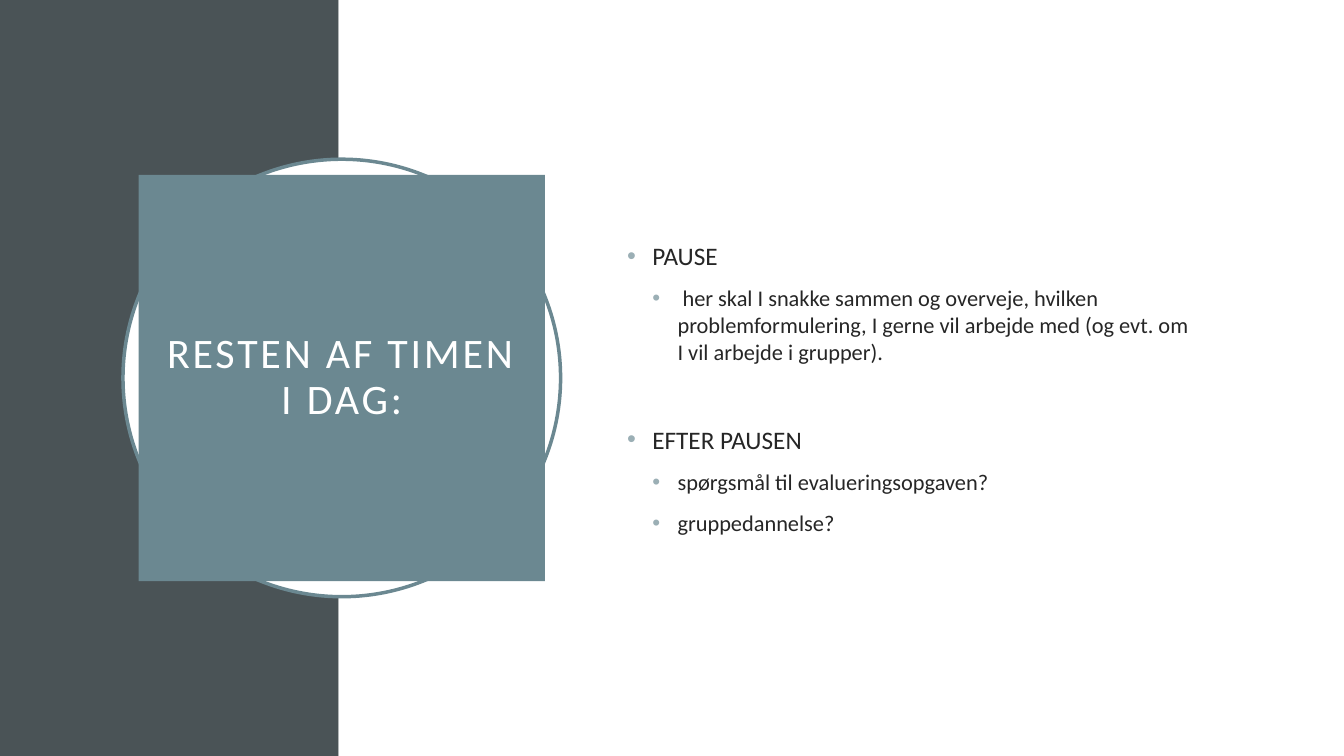
from pptx import Presentation
from pptx.dml.color import RGBColor
from pptx.enum.shapes import MSO_SHAPE as SHAPE
from pptx.enum.text import MSO_ANCHOR as ANCHOR, MSO_AUTO_SIZE as AUTO, PP_ALIGN as ALIGN
from pptx.oxml.ns import qn
from pptx.util import Inches, Pt
from lxml.etree import SubElement

# Content
TITLE = "RESTEN AF TIMEN I DAG:"
ITEMS = [  # level, text, space before in points
    (0, "PAUSE", 0),
    (1, " her skal I snakke sammen og overveje, hvilken problemformulering, "
        "I gerne vil arbejde med (og evt. om I vil arbejde i grupper).", 10),
    (0, "EFTER PAUSEN", 42),
    (1, "spørgsmål til evalueringsopgaven?", 10),
    (1, "gruppedannelse?", 10),
]
FONT = "Calibri"
SIZES = (18, 16)
INDENT = 0.25
COLORS = {"band": "4A5356", "white": "FFFFFF", "accent": "6B8891",
          "text": "262626", "bullet": "9BAFB5"}

# Layout in inches
W, H = 13.33, 7.5
BAND = 3.36
CIRCLE, SQUARE = 4.34, 4.03
CENTER_X, CENTER_Y = 3.39, 3.75
BODY = (6.12, 1.53, 5.82, 4.43)


def rgb(name):
    return RGBColor.from_string(COLORS[name])


def centered(size):
    return CENTER_X - size / 2, CENTER_Y - size / 2, size, size


def place(shape, box):
    shape.left, shape.top, shape.width, shape.height = map(Inches, box)


def style(p, size, color):
    for r in p.runs:
        r.font.name, r.font.size = FONT, Pt(size)
        r.font.color.rgb = rgb(color)


def add_bullet(p, level):
    pPr = p._p.get_or_add_pPr()
    pPr.set("marL", str(Inches(INDENT * (level + 1))))
    pPr.set("indent", str(-Inches(INDENT)))
    clr = SubElement(pPr, qn("a:buClr"))
    SubElement(clr, qn("a:srgbClr"), val=COLORS["bullet"])
    SubElement(pPr, qn("a:buFont"), typeface="Arial")
    SubElement(pPr, qn("a:buChar"), char="•")


prs = Presentation()
prs.slide_width, prs.slide_height = Inches(W), Inches(H)
s = prs.slides.add_slide(prs.slide_layouts[1])
title, body = s.placeholders

# Background panels and ring
for kind, box, fill, line in [
    (SHAPE.RECTANGLE, (0, 0, BAND, H), "band", None),
    (SHAPE.RECTANGLE, (BAND, 0, W - BAND, H), "white", None),
    (SHAPE.OVAL, centered(CIRCLE), "white", "accent"),
]:
    sp = s.shapes.add_shape(kind, *map(Inches, box))
    sp.shadow.inherit = False
    sp.fill.solid()
    sp.fill.fore_color.rgb = rgb(fill)
    if line:
        sp.line.color.rgb = rgb(line)
        sp.line.width = Pt(2.5)
    else:
        sp.line.fill.background()
    title._element.addprevious(sp._element)

# Title square
place(title, centered(SQUARE))
title.fill.solid()
title.fill.fore_color.rgb = rgb("accent")
tf = title.text_frame
tf.text = TITLE
tf.word_wrap, tf.auto_size, tf.vertical_anchor = True, AUTO.NONE, ANCHOR.MIDDLE
tf.margin_left = tf.margin_right = tf.margin_top = tf.margin_bottom = Inches(0.2)
p = tf.paragraphs[0]
p.alignment, p.line_spacing = ALIGN.CENTER, 0.9
style(p, 30, "white")
p.runs[0].font._element.set("spc", "200")

# Bulleted list
place(body, BODY)
tf = body.text_frame
tf.word_wrap, tf.auto_size, tf.vertical_anchor = True, AUTO.NONE, ANCHOR.MIDDLE
tf.margin_top = Inches(0.26)
for i, (level, text, before) in enumerate(ITEMS):
    p = tf.add_paragraph() if i else tf.paragraphs[0]
    p.text, p.level = text, level
    p.line_spacing, p.space_before = 1.0, Pt(before)
    add_bullet(p, level)
    style(p, SIZES[level], "text")

prs.save("out.pptx")
